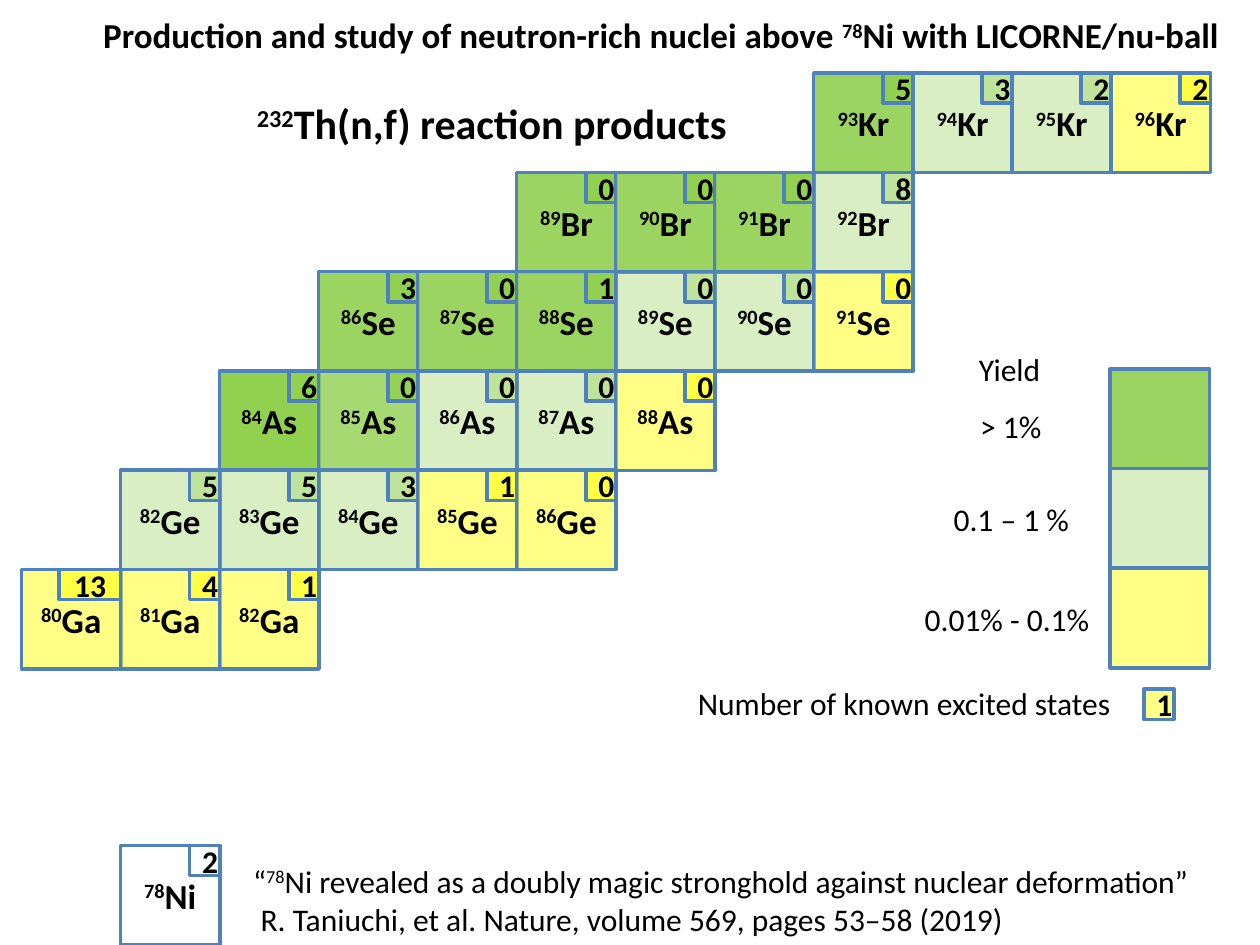
from lxml.etree import SubElement
from pptx import Presentation
from pptx.dml.color import RGBColor
from pptx.enum.shapes import MSO_SHAPE
from pptx.enum.text import MSO_ANCHOR, MSO_AUTO_SIZE, PP_ALIGN
from pptx.oxml.ns import qn
from pptx.util import Inches, Pt

GREEN = RGBColor(0x92, 0xD0, 0x50)
YELLOW = RGBColor(0xFF, 0xFF, 0x00)
BLUE = RGBColor(0x4F, 0x81, 0xBD)
BLACK = RGBColor(0, 0, 0)

# Yield classes: colour and opacity in percent
TOP, HIGH, UPPER = (GREEN, 100), (GREEN, 90), (GREEN, 80)
MID, LOW = (GREEN, 34), (YELLOW, 48)

# Element, first column, first mass number, (known states, yield) per isotope
CHART = [
    ("Kr", 8, 93, [(5, HIGH), (3, MID), (2, MID), (2, LOW)]),
    ("Br", 5, 89, [(0, HIGH), (0, HIGH), (0, HIGH), (8, MID)]),
    ("Se", 3, 86, [(3, HIGH), (0, HIGH), (1, HIGH), (0, MID), (0, MID), (0, LOW)]),
    ("As", 2, 84, [(6, TOP), (0, UPPER), (0, MID), (0, MID), (0, LOW)]),
    ("Ge", 1, 82, [(5, MID), (5, MID), (3, MID), (1, LOW), (0, LOW)]),
    ("Ga", 0, 80, [(13, LOW), (4, LOW), (1, LOW)]),
]
KEY = [HIGH, MID, LOW]

# Text box: left, top, width, height, wrap, paragraphs of
# (size, bold, indent, space before, runs); a run starting with ^ is raised
NOTES = [
    (7.68, 3.18, 0.69, 0.4, False, [(18, False, 0, 0, ["> 1%"])]),
    (7.47, 3.92, 1.13, 0.4, False, [(18, False, 0, 0, ["0.1 – 1 %"])]),
    (7.24, 4.71, 1.52, 0.4, False, [(18, False, 0, 0, ["0.01% - 0.1%"])]),
    (7.67, 2.73, 0.7, 0.4, False, [(18, False, 0, 0, ["Yield"])]),
    (5.44, 5.38, 3.51, 0.4, False,
     [(18, False, 0, 0, ["Number of known excited states"])]),
    (0.72, 0.06, 9.15, 1.07, False, [
        (20, True, 0, 0, ["Production and study of neutron-rich nuclei above ",
                          "^78", "Ni with LICORNE/nu-ball"]),
        (24, True, 1.22, 24, ["^232", "Th(n,f) reaction products"])]),
    (1.91, 6.79, 8.05, 0.71, True, [
        (18, False, 0, 0, ["“", "^78", "Ni revealed as a doubly magic stronghold "
                           "against nuclear deformation”"]),
        (18, False, 0.06, 0,
         ["R. Taniuchi, et al. Nature, volume 569, pages 53–58 (2019)"])]),
]

LEFT, TOP_EDGE = 0.17, 0.58
COL, ROW = 0.786, 0.788
SIDE, BADGE, WIDE = 0.79, 0.24, 0.49


def write(para, runs, size, bold):
    para.font.name = "Calibri"
    para.font.size = Pt(size)
    para.font.bold = bold
    para.font.color.rgb = BLACK
    for text in runs:
        run = para.add_run()
        run.text = text.lstrip("^")
        if text.startswith("^"):
            run.font._element.set("baseline", "30000")


def box(shapes, x, y, wide, high, tint=None, runs=(), size=18):
    shape = shapes.add_shape(MSO_SHAPE.RECTANGLE, Inches(x), Inches(y),
                             Inches(wide), Inches(high))
    shape.shadow.inherit = False
    shape.line.color.rgb = BLUE
    shape.line.width = Pt(2)
    if tint:
        color, share = tint
        shape.fill.solid()
        shape.fill.fore_color.rgb = color
        if share < 100:
            tone = shape._element.spPr.find(qn("a:solidFill"))[0]
            SubElement(tone, qn("a:alpha"), val=str(share * 1000))
    else:
        shape.fill.background()
    if runs:
        frame = shape.text_frame
        frame.vertical_anchor = MSO_ANCHOR.MIDDLE
        para = frame.paragraphs[0]
        para.alignment = PP_ALIGN.CENTER
        write(para, runs, size, True)


def nuclide(slide, x, y, mass, name, states, tint=None):
    """Isotope square with its count of states in the top right corner."""
    group = slide.shapes.add_group_shape().shapes
    box(group, x, y, SIDE, SIDE, tint, [f"^{mass}", name], 20)
    wide = WIDE if states > 9 else BADGE
    box(group, x + SIDE - wide, y, wide, BADGE, tint, [str(states)])


def note(slide, x, y, wide, high, wrap, paras):
    shape = slide.shapes.add_textbox(Inches(x), Inches(y), Inches(wide), Inches(high))
    frame = shape.text_frame
    frame.word_wrap = wrap
    frame.auto_size = MSO_AUTO_SIZE.SHAPE_TO_FIT_TEXT
    for i, (size, bold, indent, before, runs) in enumerate(paras):
        para = frame.add_paragraph() if i else frame.paragraphs[0]
        if indent:
            para._p.get_or_add_pPr().set("marL", str(Inches(indent)))
        if before:
            para.space_before = Pt(before)
        write(para, runs, size, bold)


def main():
    deck = Presentation()
    deck.slide_width, deck.slide_height = Inches(10), Inches(7.5)
    slide = deck.slides.add_slide(deck.slide_layouts[6])
    for row, (name, first, mass, cells) in enumerate(CHART):
        for i, (states, tint) in enumerate(cells):
            nuclide(slide, LEFT + (first + i) * COL, TOP_EDGE + row * ROW,
                    mass + i, name, states, tint)
    for i, tint in enumerate(KEY):
        box(slide.shapes, 8.81, 2.93 + i * SIDE, SIDE, SIDE, tint)
    box(slide.shapes, 9.08, 5.47, BADGE, BADGE, LOW, ["1"])
    nuclide(slide, LEFT + COL, 7.5 - SIDE, 78, "Ni", 2)
    for item in NOTES:
        note(slide, *item)
    deck.save("out.pptx")


if __name__ == "__main__":
    main()
